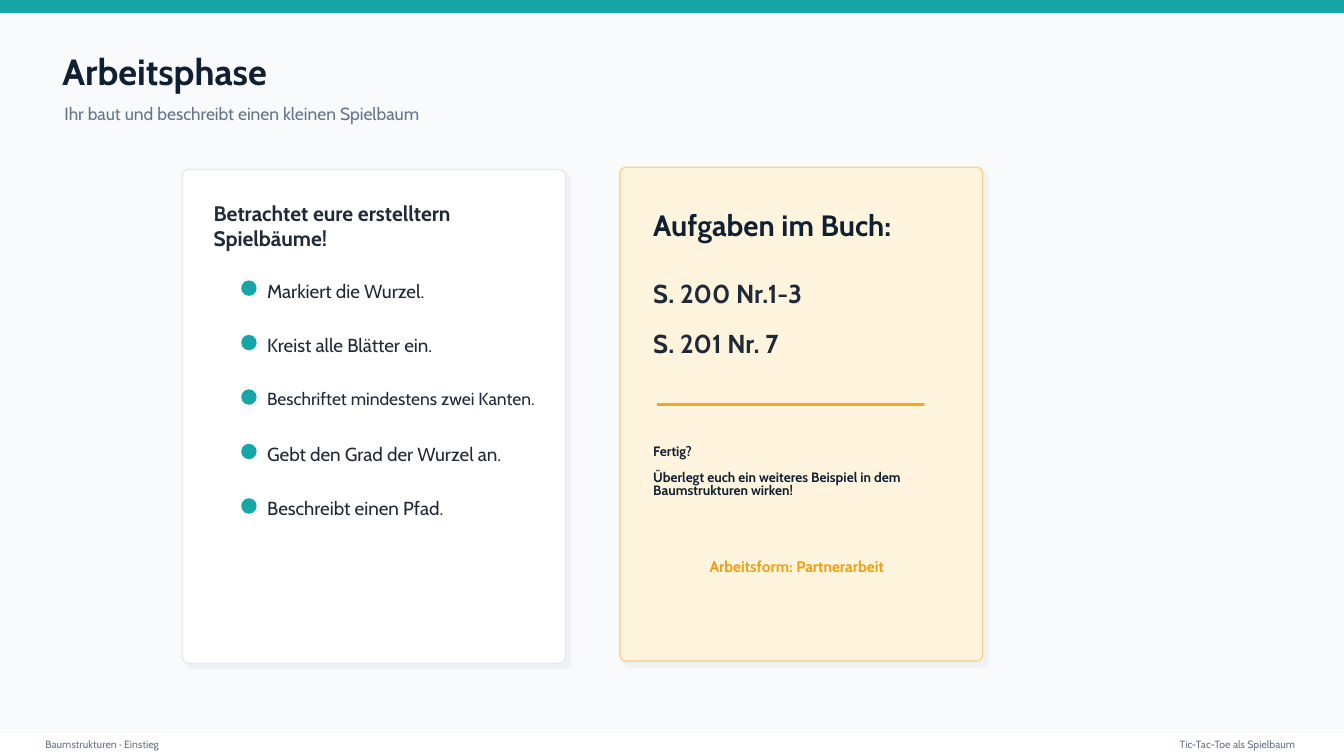
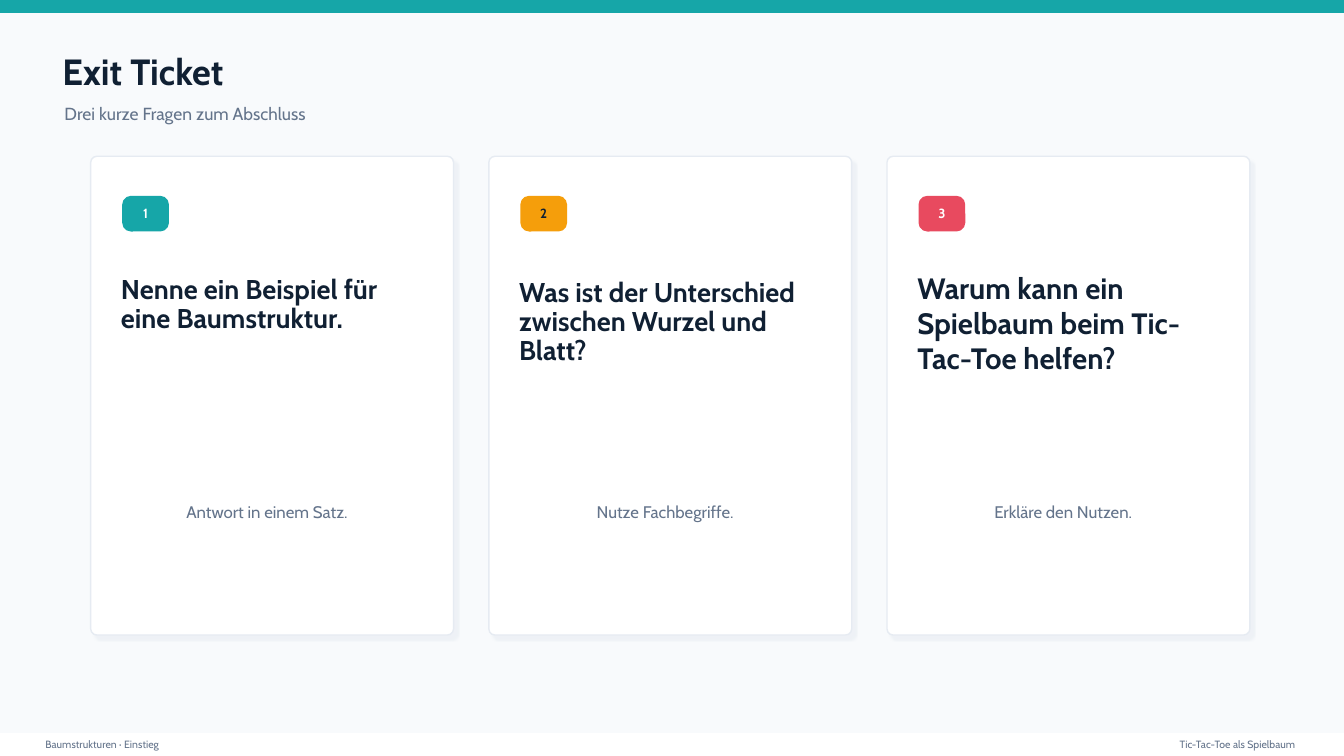
import pptx
import pptx.dml.color
import pptx.enum.shapes
import pptx.enum.text
import pptx.oxml
import pptx.oxml.ns
import pptx.util

Pt = pptx.util.Pt
ALIGN = pptx.enum.text.PP_ALIGN
SHAPE = pptx.enum.shapes.MSO_SHAPE

FONT = "Cabin"
TEAL, AMBER, RED = "16A6A8", "F59E0B", "E84A5F"
NAVY, INK, GREY, WHITE = "102033", "1F2937", "64748B", "FFFFFF"
PAPER, CREAM = "F8FAFC", "FFF4DD"
CARD_EDGE, CREAM_EDGE, SHADOW = "E6EBF2", "FBD38D", "CBD5E1"

PAGE_WIDTH, PAGE_HEIGHT = 960, 540
FOOTER_LEFT = "Baumstrukturen · Einstieg"
FOOTER_RIGHT = "Tic-Tac-Toe als Spielbaum"

TITLE_STYLE = {"size": 26, "color": NAVY, "bold": True}
SUBTITLE_STYLE = {"size": 12.5, "color": GREY}
FOOTER_STYLE = {"size": 7.5, "color": GREY}
STEP_STYLE = {"size": 13.5, "color": INK}
DENSE_STEP_STYLE = {"size": 12.5, "color": INK, "line_spacing": 0.9}
HINT_STYLE = {"size": 12, "color": GREY, "alignment": ALIGN.CENTER}

WORK = {
    "title": "Arbeitsphase",
    "subtitle": "Ihr baut und beschreibt einen kleinen Spielbaum",
    "heading": "Betrachtet eure erstelltern Spielbäume!",
    "steps": [
        ("Markiert die Wurzel.", STEP_STYLE),
        ("Kreist alle Blätter ein.", STEP_STYLE),
        ("Beschriftet mindestens zwei Kanten.", DENSE_STEP_STYLE),
        ("Gebt den Grad der Wurzel an.", STEP_STYLE),
        ("Beschreibt einen Pfad.", STEP_STYLE),
    ],
    "book": "Aufgaben im Buch:",
    "exercises": ["S. 200 Nr.1-3", "S. 201 Nr. 7"],
    "extra": ["Fertig?", "Überlegt euch ein weiteres Beispiel in dem Baumstrukturen wirken!"],
    "mode": "Arbeitsform: Partnerarbeit",
}

EXIT = {
    "title": "Exit Ticket",
    "subtitle": "Drei kurze Fragen zum Abschluss",
    # question, hint, badge colour, number colour, question height, question style
    "cards": [
        ("Nenne ein Beispiel für eine Baumstruktur.", "Antwort in einem Satz.",
         TEAL, WHITE, 54, {"size": 19.4, "line_spacing": 0.9}),
        ("Was ist der Unterschied zwischen Wurzel und Blatt?", "Nutze Fachbegriffe.",
         AMBER, NAVY, 79.2, {"size": 19.4, "line_spacing": 0.9}),
        ("Warum kann ein Spielbaum beim Tic-Tac-Toe helfen?", "Erkläre den Nutzen.",
         RED, WHITE, 79.2, {"size": 21}),
    ],
}


def rgb(color):
    return pptx.dml.color.RGBColor.from_string(color)


def add_effects(shape, content=""):
    namespace = pptx.oxml.ns.nsdecls("a")
    effects = pptx.oxml.parse_xml(f"<a:effectLst {namespace}>{content}</a:effectLst>")
    shape._element.spPr.append(effects)


def write(shape, texts, size, color, bold=False, gap=0, **paragraph_format):
    """Fill a shape with one paragraph per text, gap points apart."""
    frame = shape.text_frame
    frame_format = {
        "word_wrap": True, "vertical_anchor": pptx.enum.text.MSO_ANCHOR.MIDDLE,
        "margin_left": 0, "margin_right": 0, "margin_top": 0, "margin_bottom": 0,
    }
    for name, value in frame_format.items():
        setattr(frame, name, value)
    for index, text in enumerate(texts):
        para = frame.add_paragraph() if index else frame.paragraphs[0]
        if index:
            para.space_before = Pt(gap)
        for name, value in ({"alignment": ALIGN.LEFT} | paragraph_format).items():
            setattr(para, name, value)
        span = para.add_run()
        span.text = text
        for name, value in {"name": FONT, "size": Pt(size), "bold": bold}.items():
            setattr(span.font, name, value)
        span.font.color.rgb = rgb(color)


def add_text(page, area, texts, **style):
    box = page.shapes.add_textbox(*map(Pt, area))
    write(box, [texts] if isinstance(texts, str) else texts, **style)


def add_block(page, area, fill, edge=None, kind=SHAPE.RECTANGLE, radius=None):
    block = page.shapes.add_shape(kind, *map(Pt, area))
    block.fill.solid()
    block.fill.fore_color.rgb = rgb(fill)
    block.line.color.rgb = rgb(edge or fill)
    block.line.width = Pt(1)
    if radius:
        block.adjustments[0] = radius / min(area[2:])
    block.shadow.inherit = False
    return block


def add_card(page, area, fill=WHITE, edge=CARD_EDGE):
    card = add_block(page, area, fill, edge, SHAPE.ROUNDED_RECTANGLE, 4.4)
    card._element.spPr.remove(card._element.spPr.find(pptx.oxml.ns.qn("a:effectLst")))
    add_effects(card, (
        f'<a:outerShdw blurRad="{Pt(1)}" dist="{Pt(4)}" dir="2700000" algn="tl"'
        f' rotWithShape="0"><a:srgbClr val="{SHADOW}"><a:alpha val="22000"/>'
        "</a:srgbClr></a:outerShdw>"))


def add_rule(page, left, right, top):
    rule = page.shapes.add_connector(
        pptx.enum.shapes.MSO_CONNECTOR.STRAIGHT, Pt(left), Pt(top), Pt(right), Pt(top))
    rule.line.color.rgb = rgb(AMBER)
    rule.line.width = Pt(2)
    color = rule._element.spPr.find(".//" + pptx.oxml.ns.qn("a:srgbClr"))
    color.append(pptx.oxml.parse_xml(
        f'<a:alpha {pptx.oxml.ns.nsdecls("a")} val="90000"/>'))
    add_effects(rule)


def add_page(deck, content):
    """Add a slide with background, bands, footers, title and subtitle."""
    page = deck.slides.add_slide(deck.slide_layouts[6])
    page.background.fill.solid()
    page.background.fill.fore_color.rgb = rgb(PAPER)
    add_block(page, (0, 0, PAGE_WIDTH, 8.64), TEAL)
    add_block(page, (0, 524.2, PAGE_WIDTH, 15.8), WHITE)
    add_text(page, (32.4, 526.3, 302.4, 10), FOOTER_LEFT, **FOOTER_STYLE)
    add_text(page, (655.2, 526.3, 270, 10), FOOTER_RIGHT,
             alignment=ALIGN.RIGHT, **FOOTER_STYLE)
    add_text(page, (44.6, 32.4, 612, 36), content["title"], **TITLE_STYLE)
    add_text(page, (46.1, 70.6, 648, 21.6), content["subtitle"], **SUBTITLE_STYLE)
    return page


def build_work_page(deck):
    page = add_page(deck, WORK)
    add_card(page, (130.3, 121, 273.6, 352.8))
    add_text(page, (152.6, 136.8, 185, 49), WORK["heading"],
             size=15, color=INK, bold=True)
    first_top, pitch = 197.4, 38.9
    for index, (step, style) in enumerate(WORK["steps"]):
        top = first_top + index * pitch
        add_block(page, (172.8, top + 3.4, 10, 10), TEAL, kind=SHAPE.OVAL)
        add_text(page, (190.8, top, 208.8, 20.2), step, **style)

    left, width = 466.6, 205.2
    add_card(page, (442.8, 119.5, 259.2, 352.8), CREAM, CREAM_EDGE)
    add_text(page, (left, 146.9, 180, 27.4), WORK["book"],
             size=21, color=NAVY, bold=True)
    add_text(page, (left, 198.4, width, 61.2), WORK["exercises"],
             size=18.5, color=INK, bold=True, gap=18, line_spacing=0.8)
    add_rule(page, 469.4, 660.2, 289)
    add_text(page, (left, 317.5, width, 39.6), WORK["extra"],
             size=9.7, color=NAVY, bold=True, gap=9.4, line_spacing=0.8)
    add_text(page, (left, 384.5, width, 39.6), WORK["mode"],
             size=11, color=AMBER, bold=True, alignment=ALIGN.CENTER)


def build_exit_page(deck):
    page = add_page(deck, EXIT)
    first_left, card_width, gap = 64.8, 259.2, 25.2
    for index, card in enumerate(EXIT["cards"]):
        question, hint, badge_color, number_color, height, style = card
        left = first_left + index * (card_width + gap)
        add_card(page, (left, 111.6, card_width, 342))
        badge = add_block(page, (left + 23, 140.4, 32.4, 24.5), badge_color,
                          kind=SHAPE.ROUNDED_RECTANGLE, radius=5.76)
        write(badge, [str(index + 1)], size=9.5, color=number_color, bold=True,
              alignment=ALIGN.CENTER)
        add_text(page, (left + 21.6, 190.8, 212.4, height), question,
                 color=NAVY, bold=True, **style)
        add_text(page, (left + 21.6, 356.4, 208.8, 18), hint, **HINT_STYLE)


def main():
    deck = pptx.Presentation()
    deck.slide_width, deck.slide_height = Pt(PAGE_WIDTH), Pt(PAGE_HEIGHT)
    build_work_page(deck)
    build_exit_page(deck)
    deck.save("out.pptx")


if __name__ == "__main__":
    main()
